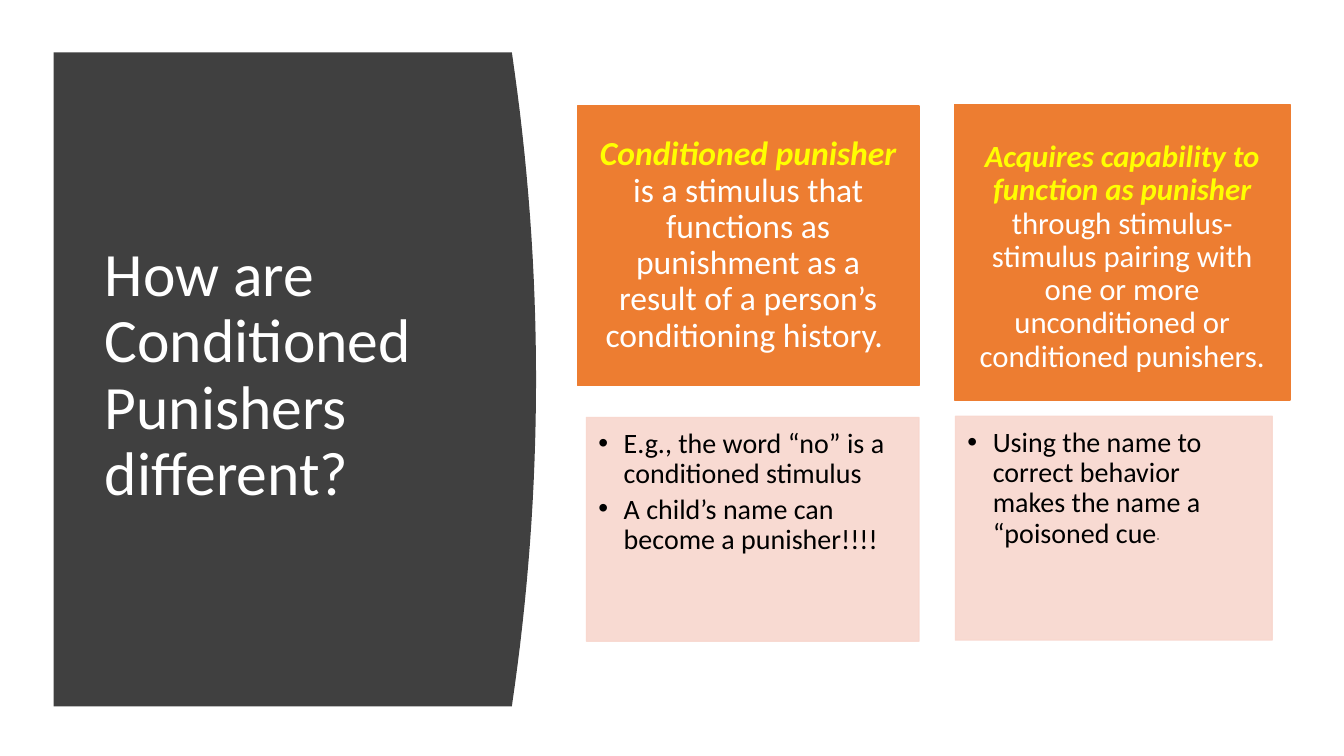
from dataclasses import dataclass

from lxml import etree
from pptx import Presentation
from pptx.dml.color import RGBColor
from pptx.enum.shapes import MSO_SHAPE
from pptx.enum.text import MSO_ANCHOR, PP_ALIGN
from pptx.oxml.ns import qn
from pptx.util import Cm, Pt

RECTANGLE = MSO_SHAPE.RECTANGLE
TOP, MIDDLE = MSO_ANCHOR.TOP, MSO_ANCHOR.MIDDLE
LEFT, CENTER = PP_ALIGN.LEFT, PP_ALIGN.CENTER


@dataclass(frozen=True)
class Theme:
    font: str = "Calibri"
    panel: str = "404040"
    card: str = "ED7D31"
    note: str = "F8D7CE"
    light: str = "FFFFFF"
    dark: str = "000000"
    accent: str = "FFFF00"
    title_size: int = 44
    note_size: int = 20
    tiny_size: int = 5
    note_opacity: int = 90


class SlideBuilder:
    def __init__(self, page, theme):
        self.page = page
        self.theme = theme

    def paint(self, shape, color, opacity=100, outlined=True):
        shape.shadow.inherit = False
        shape.fill.solid()
        shape.fill.fore_color.rgb = RGBColor.from_string(color)
        if outlined:
            shape.line.color.rgb = RGBColor.from_string(color)
            shape.line.width = Pt(1)
        else:
            shape.line.fill.background()
        if opacity < 100:
            for node in shape.element.spPr.iter(qn("a:srgbClr")):
                etree.SubElement(node, qn("a:alpha")).set("val", str(opacity * 1000))

    def frame(self, box, anchor, margins):
        frame = box.text_frame
        frame.word_wrap = True
        frame.vertical_anchor = anchor
        (frame.margin_left, frame.margin_top,
         frame.margin_right, frame.margin_bottom) = [Cm(margin) for margin in margins]
        return frame

    def format(self, para, align):
        para.alignment = align
        para.line_spacing = 0.9

    def span(self, para, text, size, color, emphasis=False):
        span = para.add_run()
        span.text = text
        span.font.name = self.theme.font
        span.font.size = Pt(size)
        span.font.bold = span.font.italic = emphasis
        span.font.color.rgb = RGBColor.from_string(color)

    def rectangle(self, area, color, opacity=100):
        box = self.page.shapes.add_shape(RECTANGLE, *[Cm(length) for length in area])
        self.paint(box, color, opacity)
        return box

    def curved_panel(self, left, top, right, bottom, bulge, steps=32):
        outline = self.page.shapes.build_freeform(Cm(left), Cm(top))
        edge = []
        for step in range(steps + 1):
            share = step / steps
            x = right + bulge * 4 * share * (1 - share)
            edge.append((Cm(x), Cm(top + (bottom - top) * share)))
        outline.add_line_segments(edge + [(Cm(left), Cm(bottom))], close=True)
        self.paint(outline.convert_to_shape(), self.theme.panel, outlined=False)

    def title(self, area, lines):
        box = self.page.shapes.add_textbox(*[Cm(length) for length in area])
        para = self.frame(box, MIDDLE, (0.25, 0.13, 0.25, 0.13)).paragraphs[0]
        self.format(para, LEFT)
        for index, line in enumerate(lines):
            if index:
                para.add_line_break()
            self.span(para, line, self.theme.title_size, self.theme.light)

    def card(self, area, term, meaning, size, top_margin):
        box = self.rectangle(area, self.theme.card)
        para = self.frame(box, MIDDLE, (0.48, top_margin, 0.48, 0.28)).paragraphs[0]
        self.format(para, CENTER)
        self.span(para, term, size, self.theme.accent, emphasis=True)
        self.span(para, meaning, size, self.theme.light)

    def note(self, area, items):
        box = self.rectangle(area, self.theme.note, self.theme.note_opacity)
        frame = self.frame(box, TOP, (0.3, 0.3, 0.4, 0.43))
        for index, spans in enumerate(items):
            para = frame.add_paragraph() if index else frame.paragraphs[0]
            self.format(para, LEFT)
            para.space_after = Pt(3.6)
            self.bullet(para)
            for text, size in spans:
                self.span(para, text, size, self.theme.dark)

    def bullet(self, para):
        properties = para._p.get_or_add_pPr()
        properties.set("marL", str(Cm(0.64)))
        properties.set("indent", str(Cm(-0.64)))
        etree.SubElement(properties, qn("a:buFont")).set("typeface", "Arial")
        etree.SubElement(properties, qn("a:buChar")).set("char", "•")


def main():
    deck = Presentation()
    deck.slide_width, deck.slide_height = Cm(33.87), Cm(19.05)
    theme = Theme()
    builder = SlideBuilder(deck.slides.add_slide(deck.slide_layouts[6]), theme)

    # Title panel with a bowed right edge
    builder.curved_panel(1.35, 1.32, 12.9, 17.8, 0.61)
    builder.title((2.39, 2.82, 9.5, 13.31),
                  ["How are Conditioned ", "Punishers different?"])

    # Definition and its examples
    builder.card((14.55, 2.67, 8.61, 7.04), "Conditioned punisher ",
                 "is a stimulus that functions as punishment as a result of "
                 "a person’s conditioning history. ", 24, 0.28)
    builder.note((14.78, 10.52, 8.38, 5.64), [
        [("E.g., the word “no” is a conditioned stimulus", theme.note_size)],
        [("A child’s name can become a punisher!!!!", theme.note_size)],
    ])

    # How it is acquired and its example
    builder.card((24.05, 2.64, 8.46, 7.44), "Acquires capability to function as punisher ",
                 "through stimulus-stimulus pairing with one or more "
                 "unconditioned or conditioned punishers.", 22, 0.53)
    builder.note((24.08, 10.49, 7.98, 5.64), [
        [("Using the name to correct behavior makes the name a “poisoned cue",
          theme.note_size), ("”", theme.tiny_size)],
    ])

    deck.save("out.pptx")


if __name__ == "__main__":
    main()
